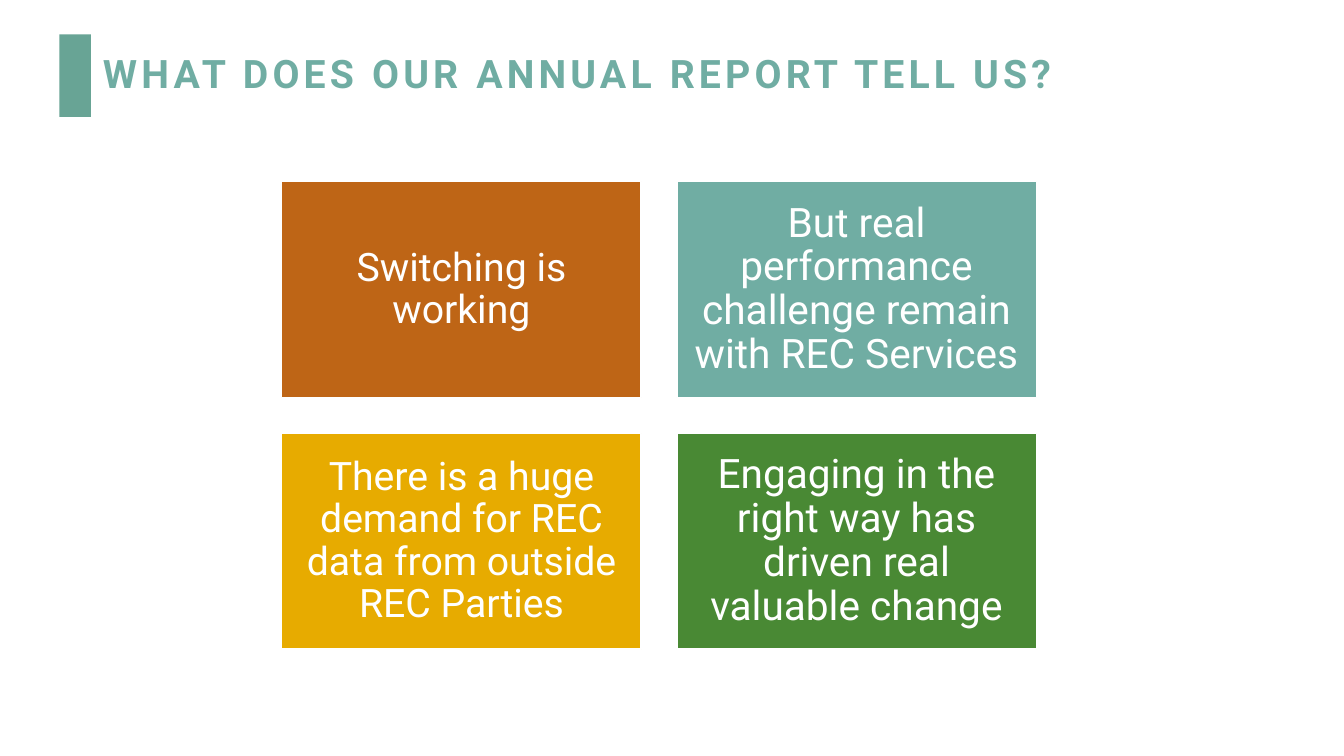
from pptx import Presentation
from pptx.dml.color import RGBColor
from pptx.enum import shapes, text
from pptx.util import Cm, Pt

FONT = "Roboto"
WHITE = RGBColor(0xFF, 0xFF, 0xFF)
ACCENT = RGBColor(0x68, 0xA4, 0x95)
TEAL = RGBColor(0x70, 0xAD, 0xA3)
ORANGE = RGBColor(0xBE, 0x65, 0x16)
YELLOW = RGBColor(0xE7, 0xAB, 0x00)
GREEN = RGBColor(0x49, 0x89, 0x34)

FINDINGS = [
    ("Switching is working", ORANGE, 28),
    ("But real performance challenge remain with REC Services", TEAL, 29),
    ("There is a huge demand for REC data from outside REC Parties", YELLOW, 28),
    ("Engaging in the right way has driven real valuable change", GREEN, 29),
]


def add_block(page, left, top, width, height, fill):
    block = page.shapes.add_shape(
        shapes.MSO_SHAPE.RECTANGLE, left, top, width, height)
    block.shadow.inherit = False
    block.fill.solid()
    block.fill.fore_color.rgb = fill
    block.line.fill.background()
    return block


def write(box, words, size, color, align, bold=False):
    frame = box.text_frame
    frame.word_wrap = True
    frame.auto_size = text.MSO_AUTO_SIZE.NONE
    frame.vertical_anchor = text.MSO_ANCHOR.MIDDLE
    para = frame.paragraphs[0]
    para.alignment = align
    para.line_spacing = 0.9
    span = para.add_run()
    span.text = words
    span.font.name = FONT
    span.font.size = Pt(size)
    span.font.bold = bold
    span.font.color.rgb = color
    return span


def add_heading(page, left, top, width, height, words):
    """Accent bar with the title, vertically centred, to its right."""
    bar_width, title_offset, inset = Cm(0.79), Cm(0.84), Cm(0.15)
    add_block(page, left, top, bar_width, height, ACCENT)
    title = page.shapes.title
    title.left, title.top = left + title_offset, top + inset
    title.width, title.height = width - title_offset, height - 2 * inset
    span = write(title, words, 28, TEAL, text.PP_ALIGN.LEFT, bold=True)
    span.font._element.set("spc", "300")


def add_findings(page, left, top, width, height, findings, columns=2):
    """Grid of equal tiles that fills the given box."""
    gap, margin = Cm(0.9), Cm(0.3)
    rows = -(-len(findings) // columns)
    tile_width = (width - gap * (columns - 1)) // columns
    tile_height = (height - gap * (rows - 1)) // rows
    for index, (words, fill, size) in enumerate(findings):
        row, column = divmod(index, columns)
        tile = add_block(page, left + column * (tile_width + gap),
                         top + row * (tile_height + gap),
                         tile_width, tile_height, fill)
        tile.line.color.rgb = WHITE
        tile.line.width = Pt(1)
        frame = tile.text_frame
        frame.margin_left = frame.margin_right = margin
        frame.margin_top = frame.margin_bottom = margin
        write(tile, words, size, WHITE, text.PP_ALIGN.CENTER)


def main():
    deck = Presentation()
    deck.slide_width, deck.slide_height = Cm(33.87), Cm(19.05)
    page = deck.slides.add_slide(deck.slide_layouts.get_by_name("Title Only"))
    add_heading(page, Cm(1.5), Cm(0.87), Cm(26.62), Cm(2.08),
                "WHAT DOES OUR ANNUAL REPORT TELL US?")
    add_findings(page, Cm(7.1), Cm(4.58), Cm(19.02), Cm(11.78), FINDINGS)
    deck.save("out.pptx")


if __name__ == "__main__":
    main()
